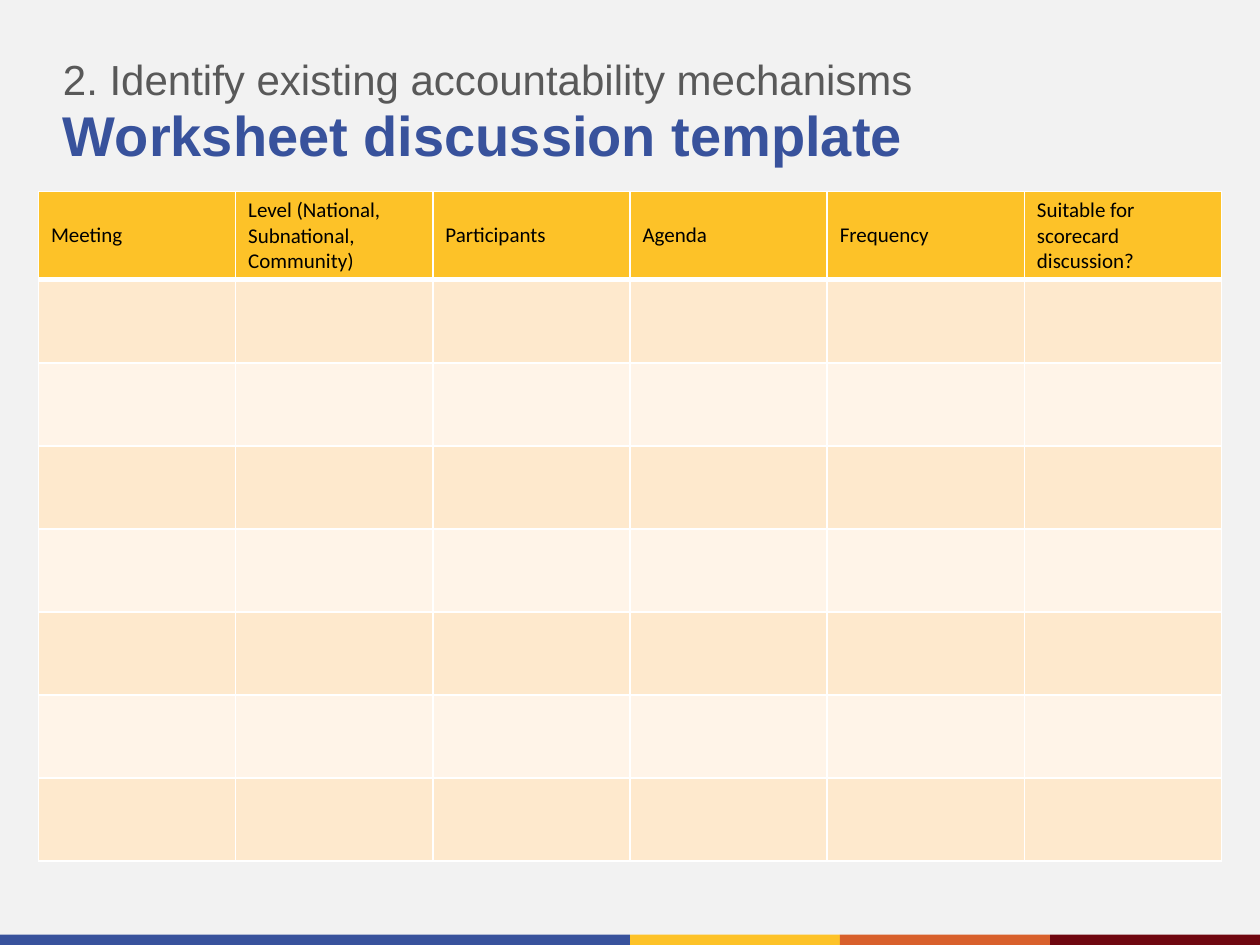
from dataclasses import dataclass
from itertools import accumulate
from typing import Any

from lxml.etree import SubElement
from pptx import Presentation
from pptx.dml.color import RGBColor
from pptx.enum.shapes import MSO_SHAPE as Shape
from pptx.enum.text import MSO_ANCHOR as Anchor
from pptx.oxml.ns import qn
from pptx.util import Inches, Pt

WIDTH, HEIGHT = Inches(10), Inches(7.5)
BLUE, YELLOW, ORANGE, MAROON = "38529C", "FDC228", "D8602C", "6F0710"


def color(hex_string):
    return RGBColor.from_string(hex_string)


def paint(fill, hex_string):
    fill.solid()
    fill.fore_color.rgb = color(hex_string)


@dataclass
class Deck:
    """Style and current slide; lengths are percentages of the slide's size."""
    slide: Any
    heading_font: str = "Arial"
    table_font: str = "Calibri"
    header_fill: str = YELLOW
    band_fills: tuple = ("FEE9CD", "FFF4E8")
    border: str = "FFFFFF"

    def box(self, left, top, width, height):
        return (round(WIDTH * left / 100), round(HEIGHT * top / 100),
                round(WIDTH * width / 100), round(HEIGHT * height / 100))

    def bar(self, place, fill):
        shape = self.slide.shapes.add_shape(Shape.RECTANGLE, *self.box(*place))
        shape.shadow.inherit = False
        paint(shape.fill, fill)
        shape.line.fill.background()

    def heading(self, place, text, size, ink, bold=False):
        frame = self.slide.shapes.add_textbox(*self.box(*place)).text_frame
        frame.word_wrap = True
        frame.margin_left = frame.margin_right = 0
        frame.margin_top = frame.margin_bottom = 0
        paragraph = frame.paragraphs[0]
        paragraph.text = text
        paragraph.line_spacing = 0.9
        font = paragraph.font
        font.name, font.size, font.bold = self.heading_font, Pt(size), bold
        font.color.rgb = color(ink)

    def borders(self, cell, bottom):
        properties = cell._tc.get_or_add_tcPr()
        for position, (side, points) in enumerate(
                [("L", 1), ("R", 1), ("T", 1), ("B", bottom)]):
            line = properties.makeelement(qn(f"a:ln{side}"), w=str(Pt(points)))
            solid = SubElement(line, qn("a:solidFill"))
            SubElement(solid, qn("a:srgbClr"), val=self.border)
            properties.insert(position, line)

    def worksheet(self, place, headers, blank_rows):
        table = self.slide.shapes.add_table(
            blank_rows + 1, len(headers), *self.box(*place)).table
        for row_number, row in enumerate(table.rows):
            is_header = row_number == 0
            for cell, header in zip(row.cells, headers):
                paint(cell.fill, self.header_fill if is_header
                      else self.band_fills[(row_number - 1) % 2])
                self.borders(cell, bottom=3 if is_header else 1)
                if is_header:
                    cell.text = header
                    cell.vertical_anchor = Anchor.MIDDLE
                font = cell.text_frame.paragraphs[0].font
                font.name, font.size, font.bold = self.table_font, Pt(12), False
                font.color.rgb = color("000000")


def main():
    presentation = Presentation()
    presentation.slide_width, presentation.slide_height = WIDTH, HEIGHT
    slide = presentation.slides.add_slide(presentation.slide_layouts[6])
    paint(slide.background.fill, "F2F2F2")
    deck = Deck(slide)

    # Footer stripe: one half, then three sixths
    widths = [50] + [50 / 3] * 3
    lefts = accumulate(widths, initial=0)
    for left, width, fill in zip(lefts, widths, (BLUE, YELLOW, ORANGE, MAROON)):
        deck.bar((left, 98.9, width, 1.1), fill)

    # Headings
    deck.heading((5, 11.47, 90, 6.4), "Worksheet discussion template",
                 32, BLUE, bold=True)
    deck.heading((5, 6.27, 90, 4.8),
                 "2. Identify existing accountability mechanisms", 24, "595959")

    # Worksheet to fill in
    headers = ["Meeting", "Level (National, Subnational, Community)",
               "Participants", "Agenda", "Frequency",
               "Suitable for scorecard discussion?"]
    deck.worksheet((3.05, 20.27, 93.9, 70.3), headers, blank_rows=7)

    presentation.save("out.pptx")


if __name__ == "__main__":
    main()
